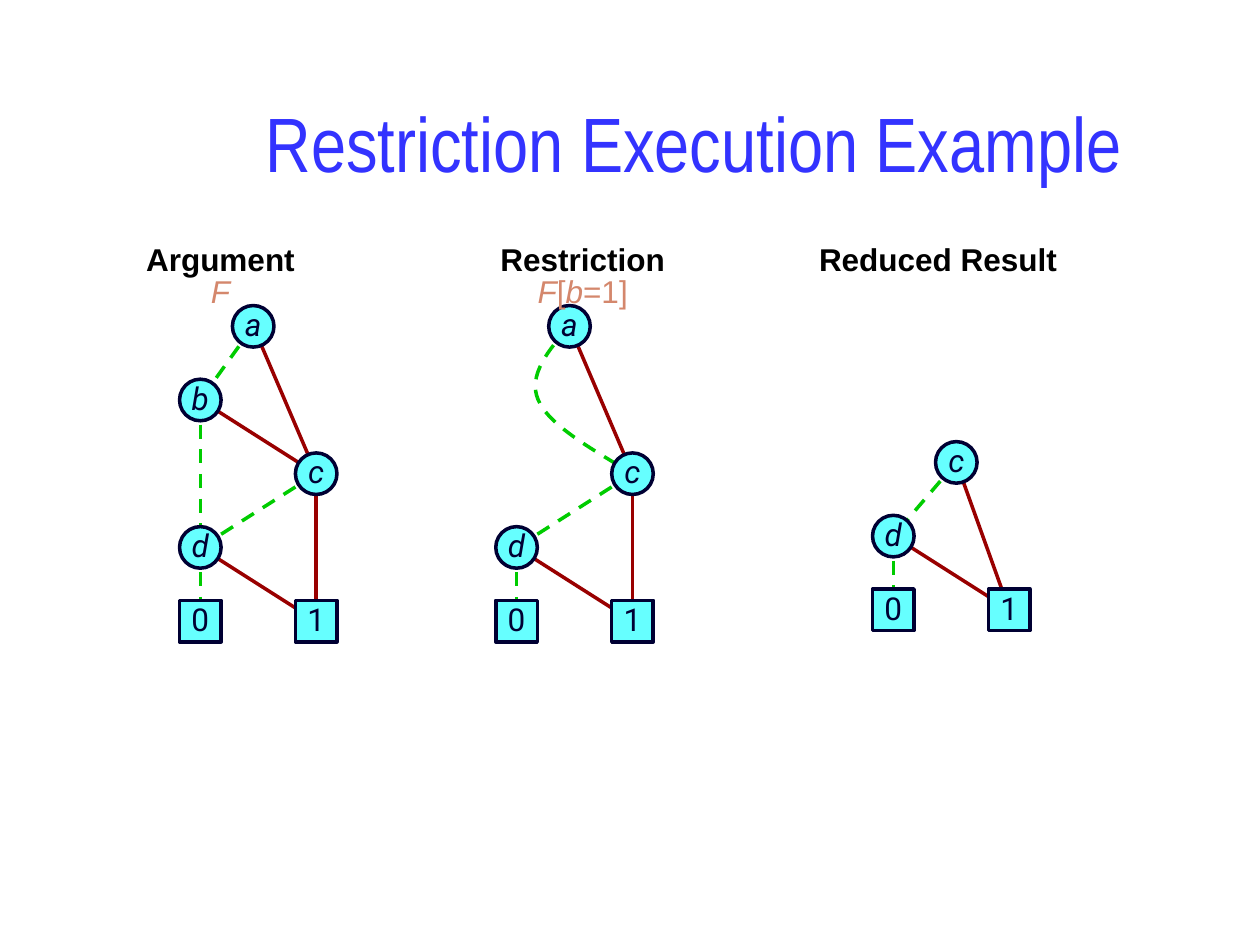
from lxml.etree import SubElement
from pptx import Presentation
from pptx.dml.color import RGBColor
from pptx.enum.dml import MSO_LINE
from pptx.enum.shapes import MSO_CONNECTOR, MSO_SHAPE
from pptx.enum.text import MSO_ANCHOR, MSO_AUTO_SIZE, PP_ALIGN
from pptx.oxml.ns import qn
from pptx.util import Inches, Pt

NODE = 0.33
ROW = 0.585
LABEL_TOP = 1.92
LOW, HIGH = "00CC00", "990000"
INK, CYAN, ACCENT = "000033", "66FFFF", "D4876C"


def rgb(value):
    """Return the colour for a hex string."""
    return RGBColor.from_string(value)


def set_line(line, color, dashed=False):
    """Format an outline or edge."""
    line.color.rgb = rgb(color)
    line.width = Pt(2)
    if dashed:
        line.dash_style = MSO_LINE.DASH


def set_font(font, name, size, color, bold=False, italic=False):
    """Format a paragraph or run font."""
    font.name, font.size = name, Pt(size)
    font.bold, font.italic = bold, italic
    font.color.rgb = rgb(color)


def add_title(slide, text, left, top, width, height):
    """Place the slide title in its placeholder."""
    title = slide.shapes.title
    title.left, title.top = Inches(left), Inches(top)
    title.width, title.height = Inches(width), Inches(height)
    tf = title.text_frame
    tf.text = text
    tf.vertical_anchor = MSO_ANCHOR.MIDDLE
    p = tf.paragraphs[0]
    p.alignment = PP_ALIGN.CENTER
    set_font(p.font, "Arial Narrow", 44, "3333FF")


def add_label(shapes, left, width, heading, formula):
    """Add a bold heading followed by formula parts, letters in italics."""
    box = shapes.add_textbox(Inches(left), Inches(LABEL_TOP), Inches(width), Inches(0.31))
    tf = box.text_frame
    tf.word_wrap = False
    tf.auto_size = MSO_AUTO_SIZE.SHAPE_TO_FIT_TEXT
    tf.margin_left = tf.margin_right = Inches(0.07)
    tf.margin_top = tf.margin_bottom = Inches(0.03)
    p = tf.paragraphs[0]
    p.alignment, p.line_spacing = PP_ALIGN.CENTER, 0.85
    r = p.add_run()
    r.text = heading
    set_font(r.font, "Arial", 18, "000000", bold=True)
    for part in formula:
        r = p.add_run()
        r.text = part
        set_font(r.font, "Arial", 18, ACCENT, italic=part.isalpha())


def add_edge(shapes, start, end, color):
    """Add a straight edge between two node centres."""
    edge = shapes.add_connector(MSO_CONNECTOR.STRAIGHT, *map(Inches, start + end))
    set_line(edge.line, color, dashed=color == LOW)
    SubElement(edge._element.spPr, qn("a:effectLst"))


def add_curve(shapes, points):
    """Add a dashed chain of cubic Bezier segments."""
    start, *rest = [(Inches(x), Inches(y)) for x, y in points]
    builder = shapes.build_freeform(*start)
    builder.add_line_segments(rest, close=False)
    sp = builder.convert_to_shape()
    sp.shadow.inherit = False
    sp.fill.background()
    set_line(sp.line, LOW, dashed=True)
    route = sp._element.spPr.find(".//" + qn("a:path"))
    segments = route.findall(qn("a:lnTo"))
    for i in range(0, len(segments), 3):
        cubic = SubElement(route, qn("a:cubicBezTo"))
        for segment in segments[i:i + 3]:
            cubic.append(segment[0])
            route.remove(segment)


def add_node(shapes, name, center):
    """Add a round variable node or a square terminal node."""
    x, y = (Inches(v - NODE / 2) for v in center)
    kind = MSO_SHAPE.OVAL if name.isalpha() else MSO_SHAPE.RECTANGLE
    sp = shapes.add_shape(kind, x, y, Inches(NODE), Inches(NODE))
    sp.shadow.inherit = False
    sp.fill.solid()
    sp.fill.fore_color.rgb = rgb(CYAN)
    set_line(sp.line, INK)
    tf = sp.text_frame
    tf.word_wrap = False
    tf.vertical_anchor = MSO_ANCHOR.MIDDLE
    tf.margin_left = tf.margin_right = tf.margin_top = tf.margin_bottom = 0
    p = tf.paragraphs[0]
    p.text = name
    p.alignment, p.line_spacing = PP_ALIGN.CENTER, 0.9
    set_font(p.font, "Roboto", 18, INK, italic=name.isalpha())


def add_diagram(slide, left, top, nodes, low, high, label, curve=()):
    """Add a decision diagram from node offsets and low and high edges."""
    shapes = slide.shapes.add_group_shape().shapes
    centers = {n: (left + dx, top + row * ROW) for n, (dx, row) in nodes.items()}
    if curve:
        add_curve(shapes, [(left + dx, top + dy) for dx, dy in curve])
    for color, edges in ((HIGH, high), (LOW, low)):
        for start, end in edges:
            add_edge(shapes, centers[start], centers[end], color)
    for name, center in centers.items():
        add_node(shapes, name, center)
    add_label(shapes, *label)


def main():
    """Build and save the slide."""
    prs = Presentation()
    prs.slide_width, prs.slide_height = Inches(10), Inches(7.5)
    slide = prs.slides.add_slide(prs.slide_layouts[5])
    add_title(slide, "Restriction Execution Example", 1.26, 0.5, 8.5, 1.25)

    base = {"d": (0, 3), "0": (0, 4), "1": (0.92, 4)}
    restricted = {"a": (0.42, 0), "c": (0.92, 2), **base}
    argument = {"b": (0, 1), **restricted}
    reduced = {"c": (0.5, 2), **base}
    bypass = [(0.42, 0), (0.25, 0.19), (0.09, 0.39), (0.17, 0.58),
              (0.25, 0.78), (0.59, 0.97), (0.92, 1.17)]

    add_diagram(slide, 1.59, 2.59, argument, ["ab", "bd", "cd", "d0"],
                ["ac", "bc", "c1", "d1"], (0.98, 1.54, "Argument ", ["F"]))
    add_diagram(slide, 4.1, 2.59, restricted, ["cd", "d0"], ["ac", "c1", "d1"],
                (3.51, 2.23, "Restriction ", ["F", "[", "b", "=1]"]), bypass)
    add_diagram(slide, 7.09, 2.5, reduced, ["cd", "d0"], ["c1", "d1"],
                (6.43, 2.03, "Reduced Result", []))
    prs.save("out.pptx")


if __name__ == "__main__":
    main()
